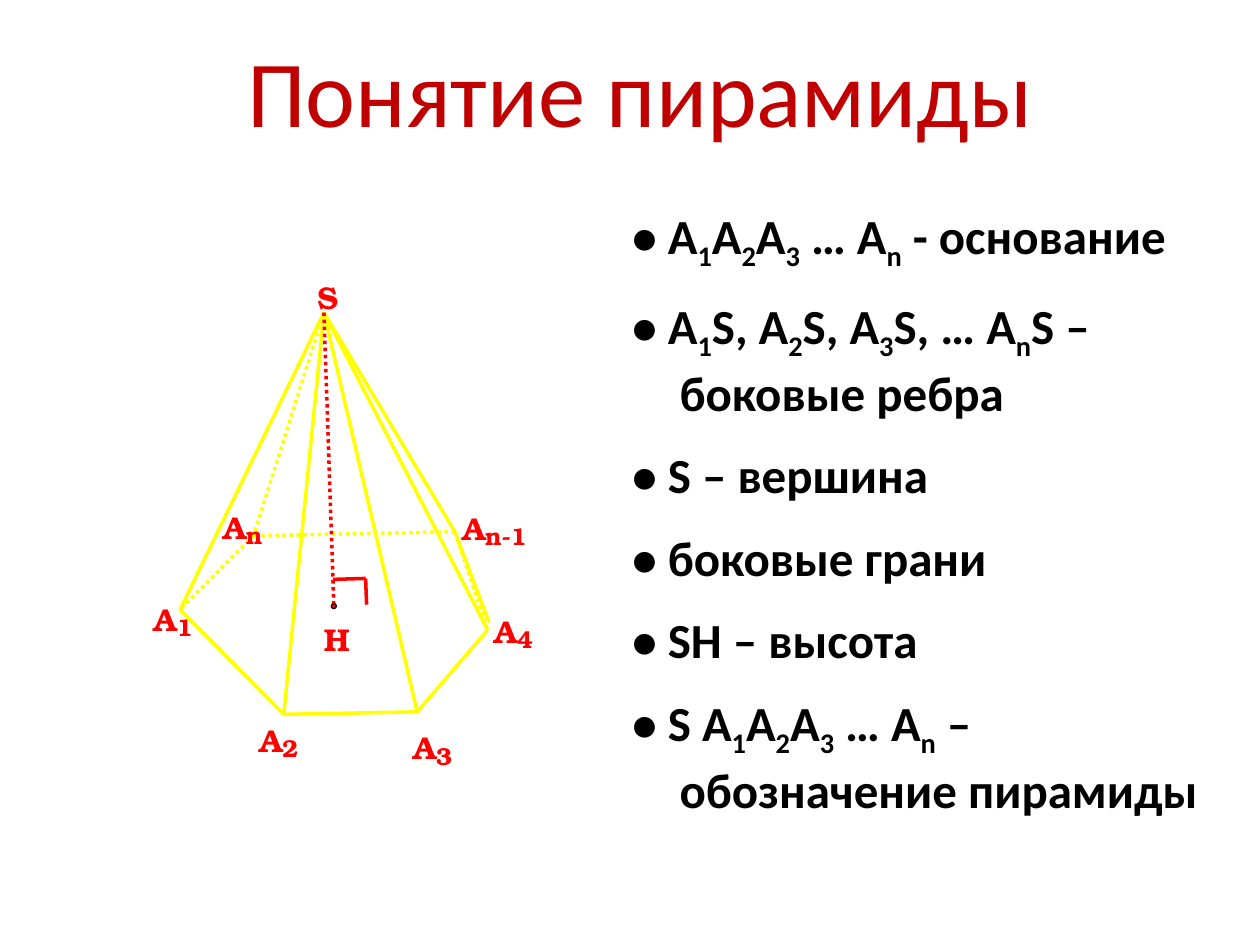
from dataclasses import dataclass
from typing import NamedTuple

from lxml.etree import SubElement
from pptx import Presentation
from pptx.dml.color import RGBColor as RGB
from pptx.enum.dml import MSO_LINE
from pptx.enum.shapes import MSO_CONNECTOR as CONN, MSO_SHAPE as SHAPE
from pptx.enum.text import MSO_ANCHOR as ANCHOR, MSO_AUTO_SIZE as FIT, PP_ALIGN as ALIGN
from pptx.oxml.ns import qn
from pptx.util import Cm, Pt


@dataclass(frozen=True)
class Theme:
    title = {"name": "Calibri", "size": Pt(54), "color": RGB(0xC0, 0, 0)}
    body = {"name": "Calibri", "size": Pt(28), "bold": True, "color": RGB(0, 0, 0)}
    label = {"name": "TeX Gyre Bonum", "size": Pt(18), "bold": True, "color": RGB(0xFF, 0, 0)}
    index = {**label, "size": Pt(14)}
    edge = RGB(0xFF, 0xFF, 0)
    height = RGB(0xFF, 0, 0)
    outline = RGB(0, 0, 0)


class Point(NamedTuple):
    x: float
    y: float


class Edge(NamedTuple):
    start: Point
    end: Point
    color: RGB = Theme.edge
    dotted: bool = False


class Label(NamedTuple):
    at: Point
    letter: str
    index: str = ""


A1, A2, A3, A4 = Point(3.63, 12.29), Point(5.72, 14.4), Point(8.41, 14.35), Point(9.83, 12.7)
AN1, AN = Point(9.17, 10.72), Point(5.11, 10.8)
S, H = Point(6.53, 6.3), Point(6.73, 12.22)
CORNER = Point(7.37, 11.66)

EDGES = [
    Edge(A3, A2),
    Edge(A4, A3),
    Edge(A1, A2),
    Edge(AN1, A4, dotted=True),
    Edge(AN1, AN, dotted=True),
    Edge(AN, A1, dotted=True),
    Edge(S, AN, dotted=True),
    *(Edge(S, v) for v in (A1, AN1, A4, A3, A2)),
    Edge(S, H, Theme.height, True),
    Edge(CORNER, Point(6.71, 11.68), Theme.height),
    Edge(CORNER, Point(7.39, 12.19), Theme.height),
    Edge(AN1, Point(9.86, 12.55)),
]

LABELS = [
    Label(Point(6.53, 12.5), "Н"),
    Label(Point(6.4, 5.61), "S"),
    Label(Point(4.5, 10.24), "А", "n"),
    Label(Point(9.32, 10.26), "А", "n-1"),
    Label(Point(9.96, 12.34), "А", "4"),
    Label(Point(8.33, 14.68), "А", "3"),
    Label(Point(5.23, 14.53), "А", "2"),
    Label(Point(3.1, 12.09), "А", "1"),
]

# Text between tildes is set as a subscript.
STATEMENTS = [
    "• А~1~А~2~А~3~ … А~n~ - основание",
    "• А~1~S, А~2~S, А~3~S, … А~n~S – боковые ребра",
    "• S – вершина",
    "• боковые грани",
    "• SH – высота",
    "• S А~1~А~2~А~3~ … А~n~ – обозначение пирамиды",
]


def add_run(p, text: str, fmt: dict, subscript: bool = False) -> None:
    r = p.add_run()
    r.text = text
    for key, value in fmt.items():
        if key == "color":
            r.font.color.rgb = value
        else:
            setattr(r.font, key, value)
    if subscript:
        r._r.get_or_add_rPr().set("baseline", "-25000")


def add_title(shapes, text: str) -> None:
    tf = shapes.add_textbox(Cm(2.11), Cm(0.43), Cm(21.59), Cm(2.74)).text_frame
    tf.word_wrap = True
    tf.vertical_anchor = ANCHOR.MIDDLE
    p = tf.paragraphs[0]
    p.alignment = ALIGN.CENTER
    add_run(p, text, Theme.title)


def add_statements(shapes, statements: list[str]) -> None:
    tf = shapes.add_textbox(Cm(12.5), Cm(4.01), Cm(12.9), Cm(14.5)).text_frame
    tf.word_wrap = True
    for i, statement in enumerate(statements):
        p = tf.add_paragraph() if i else tf.paragraphs[0]
        p.space_after = Pt(13.5)
        pPr = p._p.get_or_add_pPr()
        for key, value in {"marL": Cm(0.95), "indent": Cm(-0.95)}.items():
            pPr.set(key, str(int(value)))
        for j, text in enumerate(statement.split("~")):
            add_run(p, text, Theme.body, subscript=j % 2 == 1)


def add_edge(shapes, edge: Edge) -> None:
    ends = [Cm(v) for v in (*edge.start, *edge.end)]
    c = shapes.add_connector(CONN.STRAIGHT, *ends)
    c.line.color.rgb = edge.color
    c.line.width = Pt(0)
    if edge.dotted:
        c.line.dash_style = MSO_LINE.ROUND_DOT
    SubElement(c._element.spPr, qn("a:effectLst"))


def add_mark(shapes, at: Point, text: str, fmt: dict) -> None:
    size = fmt["size"].pt
    width, height = Cm(0.045 * size * len(text)), Cm(0.05 * size)
    tf = shapes.add_textbox(Cm(at.x), Cm(at.y), width, height).text_frame
    frame = {"word_wrap": False, "auto_size": FIT.SHAPE_TO_FIT_TEXT}
    frame.update({f"margin_{side}": 0 for side in ("left", "top", "right", "bottom")})
    for key, value in frame.items():
        setattr(tf, key, value)
    add_run(tf.paragraphs[0], text, fmt)


def add_label(shapes, label: Label) -> None:
    add_mark(shapes, label.at, label.letter, Theme.label)
    if label.index:
        at = Point(label.at.x + 0.46, label.at.y + 0.25)
        add_mark(shapes, at, label.index, Theme.index)


def add_dot(shapes, center: Point, d: float = 0.1) -> None:
    sp = shapes.add_shape(SHAPE.OVAL, Cm(center.x - d / 2), Cm(center.y - d / 2), Cm(d), Cm(d))
    sp.shadow.inherit = False
    sp.fill.solid()
    sp.fill.fore_color.rgb = Theme.height
    sp.line.color.rgb = Theme.outline
    sp.line.width = Pt(0)


def main() -> None:
    prs = Presentation()
    prs.slide_width, prs.slide_height = Cm(25.4), Cm(19.05)
    slide = prs.slides.add_slide(prs.slide_layouts[6])
    add_title(slide.shapes, "Понятие пирамиды")
    add_statements(slide.shapes, STATEMENTS)
    pyramid = slide.shapes.add_group_shape().shapes
    for edge in EDGES:
        add_edge(pyramid, edge)
    for label in LABELS:
        add_label(pyramid, label)
    add_dot(pyramid, H)
    prs.save("out.pptx")


if __name__ == "__main__":
    main()
